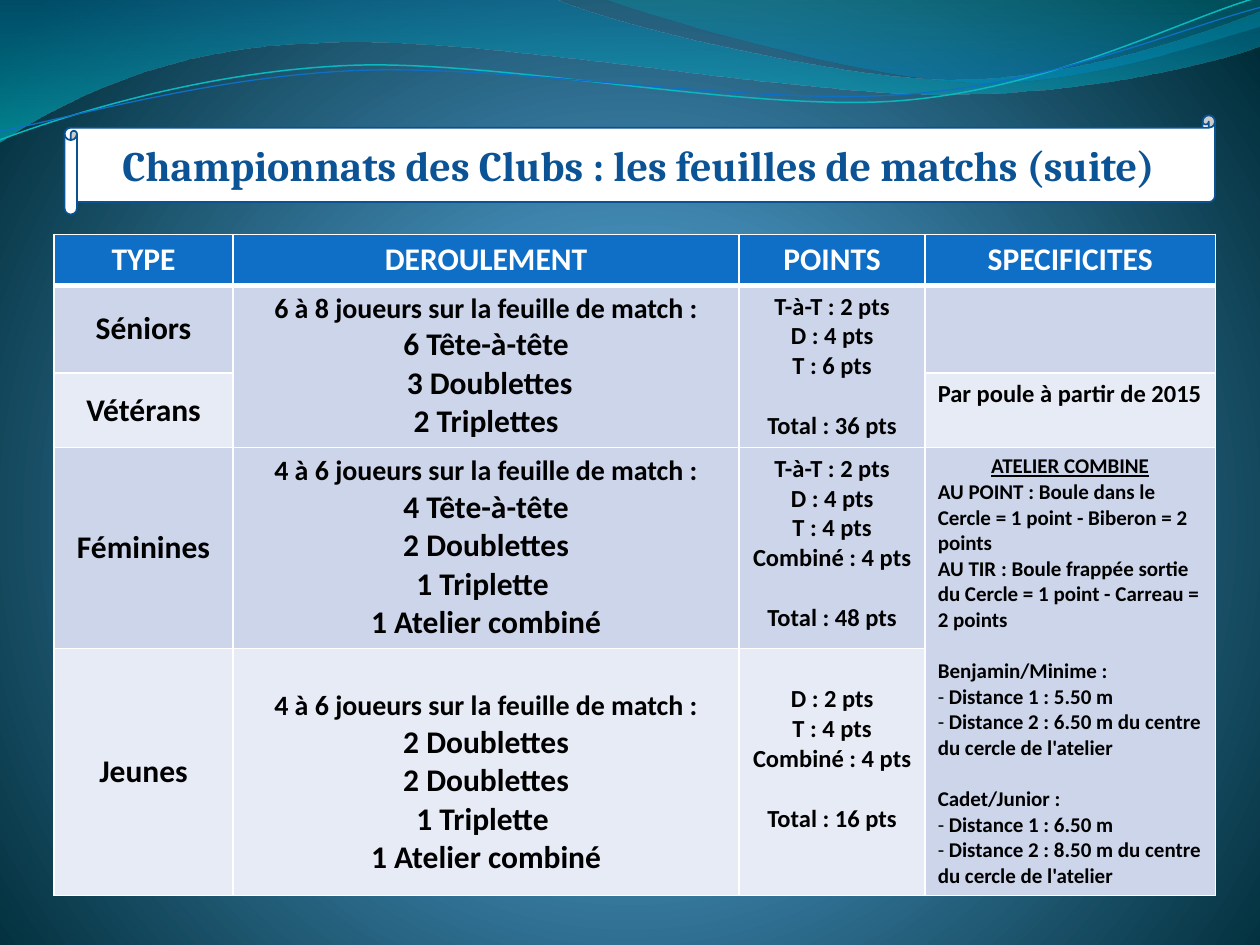
from dataclasses import dataclass
from math import cos, radians, sin

from pptx import Presentation
from pptx.dml.color import RGBColor
from pptx.enum.shapes import MSO_SHAPE
from pptx.enum.text import MSO_ANCHOR, PP_ALIGN
from pptx.oxml import parse_xml
from pptx.oxml.ns import nsdecls
from pptx.util import Pt

LEFT, CENTER = PP_ALIGN.LEFT, PP_ALIGN.CENTER
TOP, MIDDLE = MSO_ANCHOR.TOP, MSO_ANCHOR.MIDDLE
SCROLL = MSO_SHAPE.HORIZONTAL_SCROLL

WHITE = RGBColor(0xFF, 0xFF, 0xFF)
BLACK = RGBColor(0, 0, 0)
HEADER_BLUE = RGBColor(0x0F, 0x6F, 0xC6)
TITLE_BLUE = RGBColor(0x0B, 0x53, 0x94)
SCROLL_EDGE = RGBColor(0x0B, 0x52, 0x92)
TEAL = RGBColor(0x0A, 0xB8, 0xBF)
BAND_DARK = RGBColor(0xCC, 0xD5, 0xEA)
BAND_LIGHT = RGBColor(0xE7, 0xEB, 0xF5)
DEEP_BLUE, CYAN = RGBColor(0, 0x74, 0xA1), RGBColor(0, 0xC6, 0xCF)
SEA_GREEN, SKY = RGBColor(0, 0xA1, 0xA9), RGBColor(0, 0x8B, 0xBF)
GLOW, MID_GLOW = RGBColor(0x4A, 0xA0, 0xD6), RGBColor(0x4C, 0x98, 0xC7)
NIGHT = RGBColor(0, 0x2C, 0x38)

DOWNWARD = '<a:lin ang="5400000" scaled="0"/>'
RADIAL = ('<a:path path="circle"><a:fillToRect l="10000" t="110000" '
          'r="10000" b="100000"/></a:path>')
TILT = -2.7
COL_WIDTHS = (102.3, 289.2, 106.3, 165.8)
ROW_HEIGHTS = (29.2, 50, 41.8, 114.8, 141)


@dataclass
class Stop:
    pos: int
    color: RGBColor
    alpha: int = 100


@dataclass
class Wave:
    """Points in order: tuples of 2 are line ends, tuples of 6 are Bézier curves."""
    points: list[tuple]
    stops: tuple = ()
    line: RGBColor | None = None
    width: float = 0
    pivot: tuple | None = None


@dataclass
class Line:
    text: str
    size: float = 18
    align: PP_ALIGN = CENTER
    gap: float = 0
    underline: bool = False
    bullet: bool = False


@dataclass
class Cell:
    row: int
    col: int
    lines: list[Line]
    anchor: MSO_ANCHOR = TOP
    top_margin: float = 3.6


WAVES = [
    Wave([(0, 0), (316.8, -0.7), (342.7, 12.2, 478.1, 45.4, 545.8, 45.4),
          (614.2, 45.4, 689.8, 18.7, 720, 6.5), (720.7, 25.9),
          (707.8, 31.7, 626.4, 54.7, 537.1, 54), (447.8, 54, 275, 20.2, 185, 24.5),
          (92.9, 25.9, 33.1, 59.8, -0.7, 81.4)],
         (Stop(0, DEEP_BLUE, 45), Stop(100, CYAN, 55))),
    Wave([(344.9, -0.7), (366.5, 7.9, 491, 44.6, 553.7, 46.8),
          (616.3, 49.7, 691.9, 23, 720, 15.1), (720, 0)],
         (Stop(0, SEA_GREEN, 30), Stop(80, SKY, 45))),
    Wave([(0, 79.9), (34.6, 67, 113.8, 41, 199.4, 37.4),
          (284.4, 33.8, 427, 64.1, 513.4, 57.6), (599.8, 51.1, 675.4, 10.8, 718.6, -1.4)],
         line=TEAL, width=0.85, pivot=(359.3, 41.4)),
    Wave([(0, 74.9), (33.8, 69.1, 118.1, 43.9, 203.8, 40.3),
          (290.2, 36.7, 429.8, 60.5, 516.2, 54), (601.9, 48.2, 677.5, 15.1, 720, 4.3)],
         line=HEADER_BLUE, width=0.75, pivot=(359.6, 42.5)),
]


def centred(texts: list[str], size: float) -> list[Line]:
    return [Line(text, size) for text in texts]


def schedule(players: str, games: list[str]) -> list[Line]:
    return [Line(f"{players} joueurs sur la feuille de match :", 16)] + centred(games, 18)


def scores(parts: list[str], total: int) -> list[Line]:
    return centred(parts, 14) + [Line(f"Total : {total} pts", 14, gap=17.1)]


def distances(group: str, first: str, second: str) -> list[Line]:
    return [
        Line(f"{group} :", 12, LEFT, gap=14.6),
        Line(f" Distance 1 : {first} m", 12, LEFT, bullet=True),
        Line(f" Distance 2 : {second} m du centre du cercle de l'atelier", 12, LEFT, bullet=True),
    ]


WORKSHOP = [
    Line("ATELIER COMBINE", 12, underline=True),
    Line("AU POINT : Boule dans le Cercle = 1 point - Biberon = 2 points", 12, LEFT),
    Line("AU TIR : Boule frappée sortie du Cercle = 1 point - Carreau = 2 points", 12, LEFT),
    *distances("Benjamin/Minime", "5.50", "6.50"),
    *distances("Cadet/Junior", "6.50", "8.50"),
]
HEADERS = ("TYPE", "DEROULEMENT", "POINTS", "SPECIFICITES")
TYPES = ("Séniors", "Vétérans", "Féminines", "Jeunes")
COMBINED = "Combiné : 4 pts"
LAST_GAMES = ["2 Doublettes", "1 Triplette ", "1 Atelier combiné"]
CELLS = [
    *(Cell(0, c, [Line(text)]) for c, text in enumerate(HEADERS)),
    *(Cell(r, 0, [Line(text)], MIDDLE) for r, text in enumerate(TYPES, 1)),
    Cell(1, 1, schedule("6 à 8", ["6 Tête-à-tête", " 3 Doublettes", "2 Triplettes"])),
    Cell(1, 2, scores(["T-à-T : 2 pts", "D : 4 pts", "T : 6 pts"], 36)),
    Cell(2, 3, [Line("Par poule à partir de 2015", 14, LEFT)]),
    Cell(3, 1, schedule("4 à 6", ["4 Tête-à-tête", *LAST_GAMES])),
    Cell(3, 2, scores(["T-à-T : 2 pts", "D : 4 pts", "T : 4 pts", COMBINED], 48)),
    Cell(3, 3, WORKSHOP),
    Cell(4, 1, schedule("4 à 6", ["2 Doublettes", *LAST_GAMES]), top_margin=23.1),
    Cell(4, 2, scores(["D : 2 pts", "T : 4 pts", COMBINED], 16), top_margin=20.5),
]


def paint_gradient(fill, parent, stops: tuple, direction: str) -> None:
    """Swap the solid fill of the parent element for a gradient."""
    fill.solid()
    marks = "".join(
        f'<a:gs pos="{s.pos * 1000}"><a:srgbClr val="{s.color}">'
        f'<a:alpha val="{s.alpha * 1000}"/></a:srgbClr></a:gs>' for s in stops)
    parent.replace(parent.xpath("./a:solidFill")[0], parse_xml(
        f'<a:gradFill {nsdecls("a")} rotWithShape="1">'
        f"<a:gsLst>{marks}</a:gsLst>{direction}</a:gradFill>"))


def level(point: tuple, pivot: tuple) -> tuple:
    """Undo the tilt of a point, which the rotation of the shape gives back."""
    angle, dx, dy = radians(-TILT), point[0] - pivot[0], point[1] - pivot[1]
    return (pivot[0] + dx * cos(angle) - dy * sin(angle),
            pivot[1] + dx * sin(angle) + dy * cos(angle))


def bend(sp, points: list[tuple]) -> None:
    """Join each three line segments that stand for a curve into one Bézier segment."""
    segments = iter(sp.element.xpath(".//a:lnTo"))
    for point in points:
        group = [next(segments) for _ in range(len(point) // 2)]
        if len(group) == 3:
            curve = parse_xml(f'<a:cubicBezTo {nsdecls("a")}/>')
            group[0].addprevious(curve)
            for segment in group:
                curve.append(segment[0])
                segment.getparent().remove(segment)


def draw_wave(slide, wave: Wave) -> None:
    points = [p[i:i + 2] for p in wave.points for i in range(0, len(p), 2)]
    if wave.pivot:
        points = [level(point, wave.pivot) for point in points]
    start, *rest = [(Pt(x), Pt(y)) for x, y in points]
    builder = slide.shapes.build_freeform(*start)
    builder.add_line_segments(rest, close=bool(wave.stops))
    sp = builder.convert_to_shape()
    bend(sp, wave.points[1:])
    sp.shadow.inherit = False
    if wave.pivot:
        sp.rotation = TILT
    if wave.stops:
        paint_gradient(sp.fill, sp.element.spPr, wave.stops, DOWNWARD)
        sp.line.fill.background()
    else:
        sp.fill.background()
        sp.line.color.rgb, sp.line.width = wave.line, Pt(wave.width)


def write(p, text: str, *, size: float, color: RGBColor, font: str = "Calibri",
          align: PP_ALIGN = CENTER, underline: bool = False) -> None:
    p.alignment = align
    r = p.add_run()
    r.text = text
    r.font.name, r.font.size, r.font.bold = font, Pt(size), True
    r.font.color.rgb, r.font.underline = color, underline


def add_dash(p) -> None:
    pPr = p._p.get_or_add_pPr()
    pPr.set("marL", "0")
    pPr.set("indent", "0")
    pPr.append(parse_xml(f'<a:buFont {nsdecls("a")} typeface="Calibri"/>'))
    pPr.append(parse_xml(f'<a:buChar {nsdecls("a")} char="-"/>'))


def style_cell(cell, row: int) -> None:
    cell.fill.solid()
    cell.fill.fore_color.rgb = HEADER_BLUE if row == 0 else BAND_DARK if row % 2 else BAND_LIGHT
    widths = {"lnL": 1, "lnR": 1, "lnT": 3 if row == 1 else 1, "lnB": 3 if row == 0 else 1}
    for i, (side, width) in enumerate(widths.items()):
        cell._tc.get_or_add_tcPr().insert(i, parse_xml(
            f'<a:{side} {nsdecls("a")} w="{Pt(width)}"><a:solidFill>'
            f'<a:srgbClr val="{WHITE}"/></a:solidFill></a:{side}>'))


def fill_cell(cell, content: Cell) -> None:
    cell.vertical_anchor, cell.margin_top = content.anchor, Pt(content.top_margin)
    tf = cell.text_frame
    for i, line in enumerate(content.lines):
        p = tf.add_paragraph() if i else tf.paragraphs[0]
        write(p, line.text, size=line.size, color=BLACK if content.row else WHITE,
              align=line.align, underline=line.underline)
        if line.gap:
            p.space_before = Pt(line.gap)
        if line.bullet:
            add_dash(p)


def draw_table(slide) -> None:
    frame = slide.shapes.add_table(len(ROW_HEIGHTS), len(COL_WIDTHS), Pt(30.9), Pt(133.9),
                                   Pt(sum(COL_WIDTHS)), Pt(sum(ROW_HEIGHTS)))
    table = frame.table
    for col, width in zip(table.columns, COL_WIDTHS):
        col.width = Pt(width)
    for r, (row, height) in enumerate(zip(table.rows, ROW_HEIGHTS)):
        row.height = Pt(height)
        for cell in row.cells:
            style_cell(cell, r)
    for r, c in ((1, 1), (1, 2), (3, 3)):
        table.cell(r, c).merge(table.cell(r + 1, c))
    for content in CELLS:
        fill_cell(table.cell(content.row, content.col), content)


def draw_title(slide) -> None:
    sp = slide.shapes.add_shape(SCROLL, Pt(36.9), Pt(65.9), Pt(657.4), Pt(56.7))
    sp.shadow.inherit = False
    sp.fill.solid()
    sp.fill.fore_color.rgb = WHITE
    sp.line.color.rgb, sp.line.width = SCROLL_EDGE, Pt(1)
    tf = sp.text_frame
    tf.word_wrap, tf.vertical_anchor = True, MIDDLE
    write(tf.paragraphs[0], "Championnats des Clubs : les feuilles de matchs (suite) ",
          size=24, color=TITLE_BLUE, font="Cambria")


def main() -> None:
    prs = Presentation()
    prs.slide_width, prs.slide_height = Pt(720), Pt(540)
    slide = prs.slides.add_slide(prs.slide_layouts[6])
    fill = slide.background.fill
    paint_gradient(fill, slide.element.xpath("./p:cSld/p:bg/p:bgPr")[0],
                   (Stop(0, GLOW), Stop(25, MID_GLOW), Stop(100, NIGHT)), RADIAL)
    for wave in WAVES:
        draw_wave(slide, wave)
    draw_title(slide)
    draw_table(slide)
    prs.save("out.pptx")


if __name__ == "__main__":
    main()
